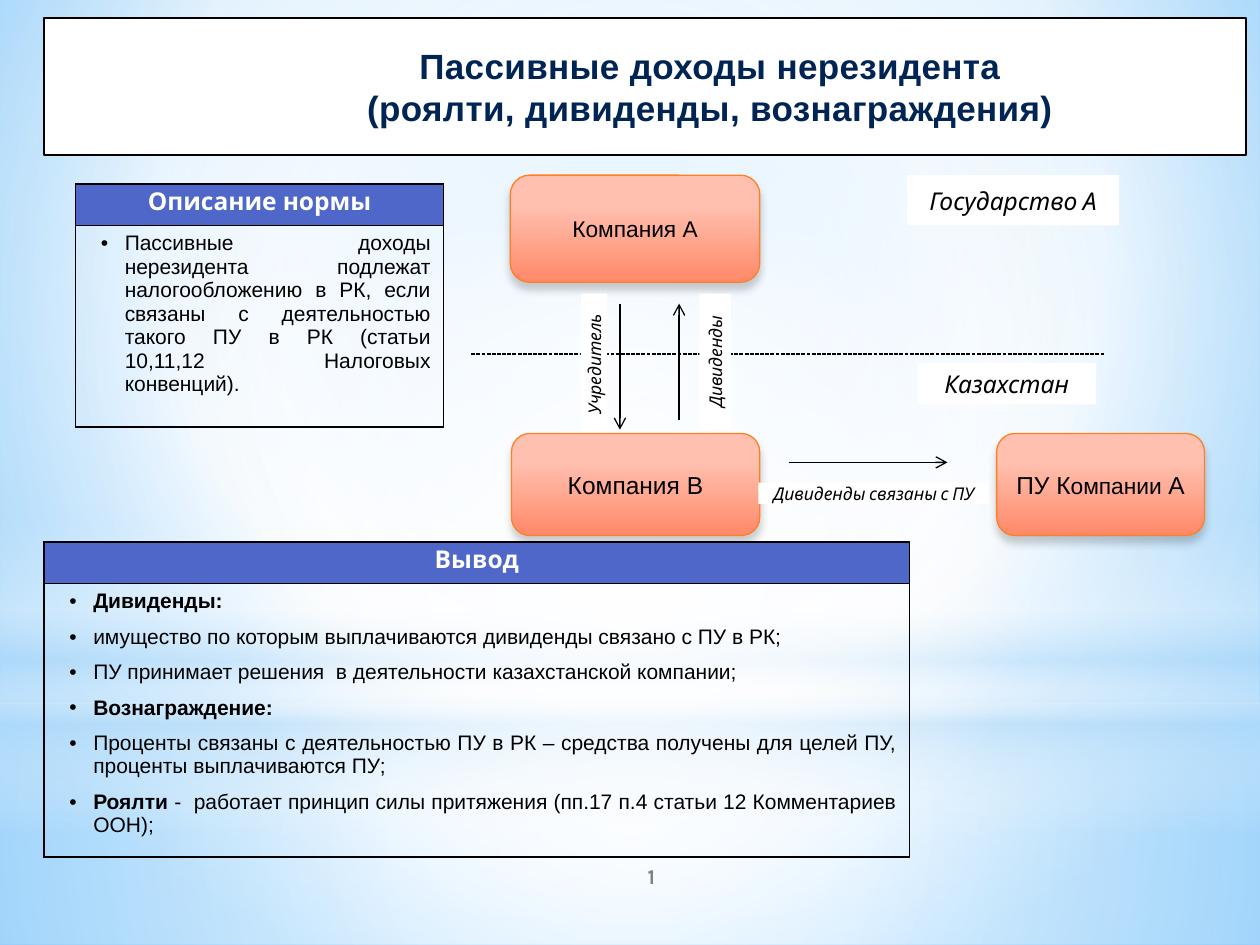
from lxml import etree
from pptx import Presentation
from pptx.dml.color import RGBColor
from pptx.enum.dml import MSO_LINE
from pptx.enum.shapes import MSO_CONNECTOR, MSO_SHAPE
from pptx.enum.text import MSO_ANCHOR, MSO_AUTO_SIZE, PP_ALIGN
from pptx.oxml.ns import qn
from pptx.util import Inches, Pt

RECT, ROUND, OVAL = MSO_SHAPE.RECTANGLE, MSO_SHAPE.ROUNDED_RECTANGLE, MSO_SHAPE.OVAL
LINE, DASH = MSO_CONNECTOR.STRAIGHT, MSO_LINE.SQUARE_DOT
MIDDLE, CENTER, JUSTIFY = MSO_ANCHOR.MIDDLE, PP_ALIGN.CENTER, PP_ALIGN.JUSTIFY
FIXED = MSO_AUTO_SIZE.NONE
HEX = {"white": "FFFFFF", "black": "000000", "navy": "002454", "head": "4E67C8",
       "sky": "9ED5FF", "deep": "5BB9FF", "pale": "B4DCFA", "grey": "808080",
       "peach": "FFC0AF", "coral": "FF8968", "orange": "FF8021"}
MID = (50, 50, 50, 50)


def tint(name):
    return RGBColor.from_string(HEX[name])


def node(top, tag, **attrs):
    return etree.SubElement(top, qn(tag), {k: str(v) for k, v in attrs.items()})


def shade(owner, fill, stops, focus=None):
    fill.gradient()
    grad = next(owner.element.iter(qn("a:gradFill")))
    for kid in list(grad):
        grad.remove(kid)
    row = node(grad, "a:gsLst")
    for pos, name, alpha in stops:
        stop = node(row, "a:gs", pos=pos * 1000)
        color = node(stop, "a:srgbClr", val=HEX[name])
        if alpha < 100:
            node(color, "a:alpha", val=alpha * 1000)
    if focus:
        ring = node(grad, "a:path", path="circle")
        node(ring, "a:fillToRect", **{s: v * 1000 for s, v in zip("ltrb", focus)})
    else:
        node(grad, "a:lin", ang=90 * 60000, scaled=0)


def style(run, size, face="Arial", color="black", bold=False, italic=False):
    font = run.font
    font.size, font.name, font.bold, font.italic = Pt(size), face, bold, italic
    font.color.rgb = tint(color)


def shape(slide, box, kind=RECT, fill=None):
    item = slide.shapes.add_shape(kind, *map(Inches, box))
    item.shadow.inherit = False
    item.line.fill.background()
    if fill:
        item.fill.solid()
        item.fill.fore_color.rgb = tint(fill)
    return item


def write(item, parts):
    frame = item.text_frame
    frame.word_wrap = True
    frame.vertical_anchor = MIDDLE
    frame.margin_left = frame.margin_right = frame.margin_top = frame.margin_bottom = 0
    para = frame.paragraphs[0]
    para.alignment = CENTER
    for text, size in parts:
        run = para.add_run()
        run.text = text
        style(run, size)
    return para


def label(slide, box, text, size, turn=False):
    item = shape(slide, box, fill="white")
    para = write(item, [(text, size)])
    style(para.runs[0], size, "Karla", italic=True)
    if turn:
        item.text_frame._txBody.bodyPr.set("vert", "vert270")


def firm(slide, box, parts):
    item = shape(slide, box, ROUND)
    item.adjustments[0] = 0.18
    shade(item, item.fill, [(28, "peach", 100), (100, "coral", 100)])
    item.line.color.rgb = tint("orange")
    item.line.width = Pt(0.75)
    glow = node(item.element.spPr.find(qn("a:effectLst")), "a:outerShdw", blurRad=Pt(5),
                dist=Pt(4), dir=90 * 60000, rotWithShape=0)
    node(node(glow, "a:srgbClr", val=HEX["black"]), "a:alpha", val=20000)
    write(item, parts)


def link(slide, start, end, dash=False):
    item = slide.shapes.add_connector(LINE, *map(Inches, start + end))
    item.line.color.rgb = tint("black")
    item.line.width = Pt(0.75)
    if dash:
        item.line.dash_style = DASH
    else:
        node(item.line._get_or_add_ln(), "a:tailEnd", type="arrow")
    node(item.element.spPr, "a:effectLst")


def backdrop(slide, box):
    x, y, w, h = box
    shade(slide, slide.background.fill,
          [(0, "sky", 100), (60, "white", 100), (100, "deep", 100)], (20, 10, 20, 60))
    edge = 5.58
    veils = [
        ((x, y + edge, w, h - edge), RECT, MID,
         [(0, "white", 91), (37, "white", 76), (100, "pale", 79)]),
        ((x, y, w, edge), RECT, MID,
         [(0, "white", 89), (48, "white", 62), (100, "pale", 79)]),
        ((x, y + 4.12, w, 2.5), RECT, None,
         [(0, "white", 0), (29, "white", 30), (45, "pale", 40), (55, "white", 26),
          (65, "pale", 60), (100, "white", 0)]),
        ((x, y + 1.75, w, edge), OVAL, MID, [(0, "white", 100), (56, "white", 0)]),
    ]
    for area, kind, focus, stops in veils:
        veil = shape(slide, area, kind)
        shade(veil, veil.fill, stops, focus)


def header(slide, box):
    x, y, w, h = box
    frame = shape(slide, box, fill="white")
    frame.line.color.rgb = tint("black")
    frame.line.width = Pt(1.25)
    title = slide.shapes.title
    frame.element.addnext(title.element)
    title.left, title.top = Inches(x + 2.33), Inches(y + 0.22)
    title.width, title.height = Inches(5.91), Inches(0.66)
    title.fill.solid()
    title.fill.fore_color.rgb = tint("white")
    text = title.text_frame
    text.text = "Пассивные доходы нерезидента\n(роялти, дивиденды, вознаграждения)"
    text.auto_size, text.vertical_anchor = FIXED, MIDDLE
    for para in text.paragraphs:
        para.alignment = CENTER
        style(para.runs[0], 20, color="navy", bold=True)
        para.runs[0].font._element.set("spc", "20")


def border(cell):
    props = cell._tc.get_or_add_tcPr()
    for spot, side in enumerate(("a:lnL", "a:lnR", "a:lnT", "a:lnB")):
        line = node(props, side, w=Pt(1))
        node(node(line, "a:solidFill"), "a:srgbClr", val=HEX["black"])
        props.insert(spot, line)


def panel(slide, box, head, items):
    x, y, w, h = box
    table = slide.shapes.add_table(2, 1, *map(Inches, box)).table
    table.rows[0].height, table.rows[1].height = Inches(0.33), Inches(h - 0.33)
    top, body = table.cell(0, 0), table.cell(1, 0)
    top.fill.solid()
    top.fill.fore_color.rgb = tint("head")
    top.margin_top = top.margin_bottom = Inches(0.03)
    body.fill.background()
    border(top)
    border(body)
    top.text_frame.text = head
    para = top.text_frame.paragraphs[0]
    para.alignment = CENTER
    style(para.runs[0], 14, "Karla", "white", True)
    frame = body.text_frame
    for i, parts in enumerate(items):
        para = frame.add_paragraph() if i else frame.paragraphs[0]
        props = para._p.get_or_add_pPr()
        props.set("marL", str(Inches(0.29)))
        props.set("indent", str(Inches(-0.19)))
        node(props, "a:buFont", typeface="Arial")
        node(props, "a:buChar", char="•")
        para.alignment = JUSTIFY
        para.space_before = Pt(6.8 if i else 0)
        for text, bold in parts:
            run = para.add_run()
            run.text = text
            style(run, 12, bold=bold)


def scheme(slide, box):
    x, y, w, h = box

    def at(left, top, *size):
        return (x + left, y + top) + size

    label(slide, at(3.46, 0, 1.68, 0.4), "Государство А", 14)
    firm(slide, at(0.31, 0, 1.98, 0.85), [("Компания А", 13)])
    link(slide, at(0, 1.42), at(5.03, 1.42), True)
    label(slide, at(0.87, 0.94, 0.21, 1.12), "Учредитель", 10, True)
    label(slide, at(1.81, 0.94, 0.25, 1.08), "Дивиденды", 10, True)
    link(slide, at(1.18, 1.02), at(1.18, 2.02))
    link(slide, at(1.65, 1.94), at(1.65, 1.02))
    firm(slide, at(0.32, 2.05, 1.97, 0.81), [("Компания В", 14)])
    label(slide, at(3.54, 1.49, 1.42, 0.33), "Казахстан", 14)
    link(slide, at(2.52, 2.28), at(3.78, 2.28))
    firm(slide, at(4.17, 2.05, 1.65, 0.81), [("ПУ К", 14), ("омпании", 13), (" А", 14)])
    label(slide, at(2.28, 2.44, 1.83, 0.17), "Дивиденды связаны с ПУ", 10)


def footer(slide, box):
    item = slide.shapes.add_textbox(*map(Inches, box))
    para = write(item, [("1", 12)])
    style(para.runs[0], 12, "Karla", "grey", True)


def main():
    deck = Presentation()
    deck.slide_width, deck.slide_height = Inches(10), Inches(7.5)
    slide = deck.slides.add_slide(deck.slide_layouts[5])
    backdrop(slide, (0, 0, 10, 7.5))
    header(slide, (0.35, 0.14, 9.54, 1.09))
    footer(slide, (4.17, 6.75, 2, 0.4))
    panel(slide, (0.6, 1.46, 2.92, 1.93), "Описание нормы", [
        [("Пассивные доходы нерезидента подлежат налогообложению в РК, если связаны "
          "с деятельностью такого ПУ в РК (статьи 10,11,12 Налоговых конвенций).", False)]])
    scheme(slide, (3.74, 1.39, 5.82, 2.86))
    panel(slide, (0.35, 4.3, 6.87, 2.39), "Вывод", [
        [("Дивиденды:", True)],
        [("имущество по которым выплачиваются дивиденды связано с ПУ в РК;", False)],
        [("ПУ принимает решения  в деятельности казахстанской компании;", False)],
        [("Вознаграждение:", True)],
        [("Проценты связаны с деятельностью ПУ в РК – средства получены для целей ПУ, "
          "проценты выплачиваются ПУ;", False)],
        [("Роялти ", True), ("-  работает принцип силы притяжения (пп.17 п.4 статьи 12 "
                             "Комментариев ООН);", False)]])
    deck.save("out.pptx")


if __name__ == "__main__":
    main()
